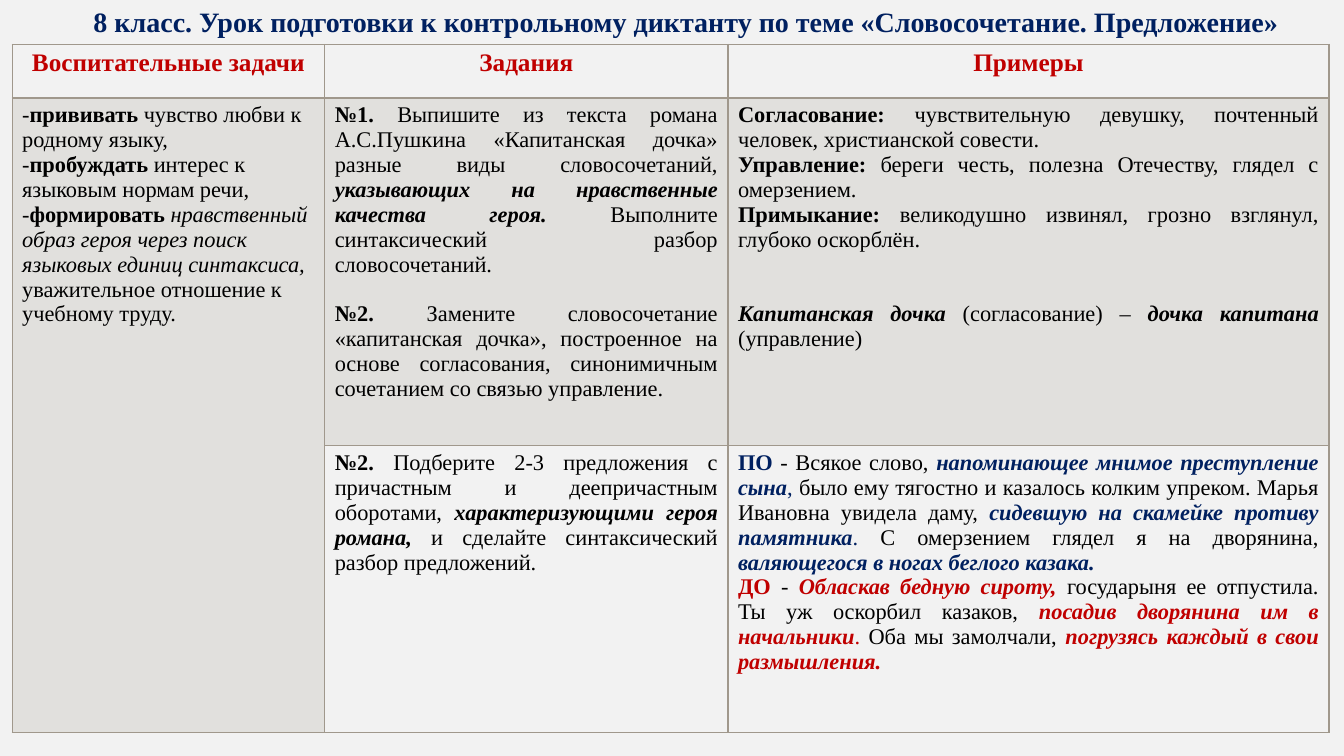
from lxml import etree
from pptx import Presentation
from pptx import util as u
from pptx.dml.color import RGBColor
from pptx.enum import text
from pptx.oxml.ns import qn

FONT, INK, NAVY, RED, EDGE = "Times New Roman", "000000", "002060", "C00000", "A0988C"
PLAIN = "{2D5ABB26-0587-4C30-8999-92F81FD0307C}"
MID, JUST, LEFT = text.PP_ALIGN.CENTER, text.PP_ALIGN.JUSTIFY, text.PP_ALIGN.LEFT
LINE = 17.7  # height of one body line, points


def tint(code):
    return RGBColor.from_string(code)


def put(item, vals):
    for key, val in vals.items():
        setattr(item, key, val)


class Page:
    """Style and current slide; lengths are percents of the slide's size."""

    def __init__(self, deck, back):
        self.deck = deck
        self.slide = deck.slides.add_slide(deck.slide_layouts[6])
        fill = self.slide.background.fill
        fill.solid()
        fill.fore_color.rgb = tint(back)

    def x(self, part):
        return round(self.deck.slide_width * part / 100)

    def y(self, part):
        return round(self.deck.slide_height * part / 100)

    def prose(self, frame, paras, size, align):
        """Each paragraph is (lines of space before, [(text, marks, colour), ...])."""
        frame.word_wrap = True
        for n, (gap, runs) in enumerate(paras):
            para = frame.add_paragraph() if n else frame.paragraphs[0]
            put(para, {"alignment": align, "space_before": u.Pt(gap * LINE)})
            for words, marks, hue in runs:
                run = para.add_run()
                run.text = words
                put(run.font, {"name": FONT, "size": u.Pt(size),
                               "bold": "b" in marks, "italic": "i" in marks})
                run.font.color.rgb = tint(hue)

    def label(self, box, paras, size, align):
        left, top, wide, high = box
        shape = self.slide.shapes.add_textbox(
            self.x(left), self.y(top), self.x(wide), self.y(high))
        self.prose(shape.text_frame, paras, size, align)

    def grid(self, left, top, cols, rows):
        frame = self.slide.shapes.add_table(
            len(rows), len(cols), self.x(left), self.y(top),
            self.x(sum(cols)), self.y(sum(rows)))
        table = frame.table
        put(table, {"first_row": False, "horz_banding": False})
        frame._element.find(".//" + qn("a:tableStyleId")).text = PLAIN
        for col, wide in zip(table.columns, cols):
            col.width = self.x(wide)
        for row, high in zip(table.rows, rows):
            row.height = self.y(high)
        return table

    def shade(self, cell, hue, alpha):
        if alpha:
            cell.fill.solid()
            cell.fill.fore_color.rgb = tint(hue)
            mark = cell._tc.tcPr.find(".//" + qn("a:srgbClr"))
            etree.SubElement(mark, qn("a:alpha"), val=str(alpha * 1000))
        else:
            cell.fill.background()

    def edge(self, cell, hue, widths):
        """Borders come before the fill, in the order left, right, top, bottom."""
        props = cell._tc.get_or_add_tcPr()
        for n, (side, wide) in enumerate(zip("LRTB", widths)):
            line = etree.Element(qn("a:ln" + side), w=str(u.Pt(wide)))
            solid = etree.SubElement(line, qn("a:solidFill"))
            etree.SubElement(solid, qn("a:srgbClr"), val=hue)
            props.insert(n, line)


HEADS = ["Воспитательные задачи", "Задания", "Примеры"]

AIMS = [
    (0, [("-", "", INK), ("прививать", "b", INK),
         (" чувство любви к родному языку,", "", INK)]),
    (0, [("-", "", INK), ("пробуждать ", "b", INK),
         ("интерес к языковым нормам речи,", "", INK)]),
    (0, [("-", "", INK), ("формировать ", "b", INK),
         ("нравственный образ героя через поиск языковых единиц синтаксиса, ", "i", INK),
         ("уважительное отношение к учебному труду.", "", INK)]),
]

TASKS = [
    (0, [("№1. ", "b", INK),
         ("Выпишите из текста романа А.С.Пушкина «Капитанская дочка» "
          "разные виды словосочетаний, ", "", INK),
         ("указывающих на нравственные качества героя. ", "bi", INK),
         ("Выполните синтаксический разбор словосочетаний.", "", INK)]),
    (1, [("№2. ", "b", INK),
         ("Замените словосочетание «капитанская дочка», построенное на основе "
          "согласования, синонимичным сочетанием со связью управление.", "", INK)]),
]

LINKS = [
    (0, [("Согласование: ", "b", INK),
         ("чувствительную девушку, почтенный человек, христианской совести.", "", INK)]),
    (0, [("Управление: ", "b", INK),
         ("береги честь, полезна Отечеству, глядел с омерзением.", "", INK)]),
    (0, [("Примыкание: ", "b", INK),
         ("великодушно извинял, грозно взглянул, глубоко оскорблён.", "", INK)]),
    (2, [("Капитанская дочка ", "bi", INK), ("(согласование) – ", "", INK),
         ("дочка капитана ", "bi", INK), ("(управление)", "", INK)]),
]

PICK = [
    (0, [("№2. ", "b", INK),
         ("Подберите 2-3 предложения с причастным и деепричастным оборотами, ", "", INK),
         ("характеризующими героя романа, ", "bi", INK),
         ("и сделайте синтаксический разбор предложений.", "", INK)]),
]

TURNS = [
    (0, [("ПО ", "b", NAVY), ("- Всякое слово, ", "", INK),
         ("напоминающее мнимое преступление сына", "bi", NAVY), (", ", "", NAVY),
         ("было ему тягостно и казалось колким упреком. Марья Ивановна увидела даму, ",
          "", INK),
         ("сидевшую на скамейке противу памятника", "bi", NAVY), (". ", "", NAVY),
         ("С омерзением глядел я на дворянина, ", "", INK),
         ("валяющегося в ногах беглого казака.", "bi", NAVY)]),
    (0, [("ДО", "b", RED), (" - ", "", INK), ("Обласкав бедную сироту, ", "bi", RED),
         ("государыня ее отпустила. Ты уж оскорбил казаков, ", "", INK),
         ("посадив дворянина им в начальники", "bi", RED), (". ", "", RED),
         ("Оба мы замолчали, ", "", INK),
         ("погрузясь каждый в свои размышления.", "bi", RED)]),
]


def main():
    deck = Presentation()
    put(deck, {"slide_width": u.Inches(13.33), "slide_height": u.Inches(7.5)})
    page = Page(deck, "F2F2F2")

    # Title
    title = "8 класс. Урок подготовки к контрольному диктанту по теме «Словосочетание. Предложение»"
    page.label((2.1, 0, 97.9, 5.87), [(0, [(title, "b", NAVY)])], 20, MID)

    # Table frame: the aims span both body rows
    table = page.grid(0.9, 5.87, [23.26, 30.01, 44.71], [7.07, 46, 38])
    table.cell(1, 0).merge(table.cell(2, 0))
    for r in range(3):
        for c in range(3):
            cell = table.cell(r, c)
            page.shade(cell, EDGE, 20 if r == 1 or (r and c == 0) else 0)
            page.edge(cell, EDGE, (1, 1, 2 if r == 1 else 1, 1 if r else 2))

    # Header row
    for c, head in enumerate(HEADS):
        page.prose(table.cell(0, c).text_frame, [(0, [(head, "b", RED)])], 18, MID)

    # Body cells
    body = {(1, 0): AIMS, (1, 1): TASKS, (1, 2): LINKS, (2, 1): PICK, (2, 2): TURNS}
    for (r, c), paras in body.items():
        page.prose(table.cell(r, c).text_frame, paras, 16, JUST if c else LEFT)

    deck.save("out.pptx")


if __name__ == "__main__":
    main()
